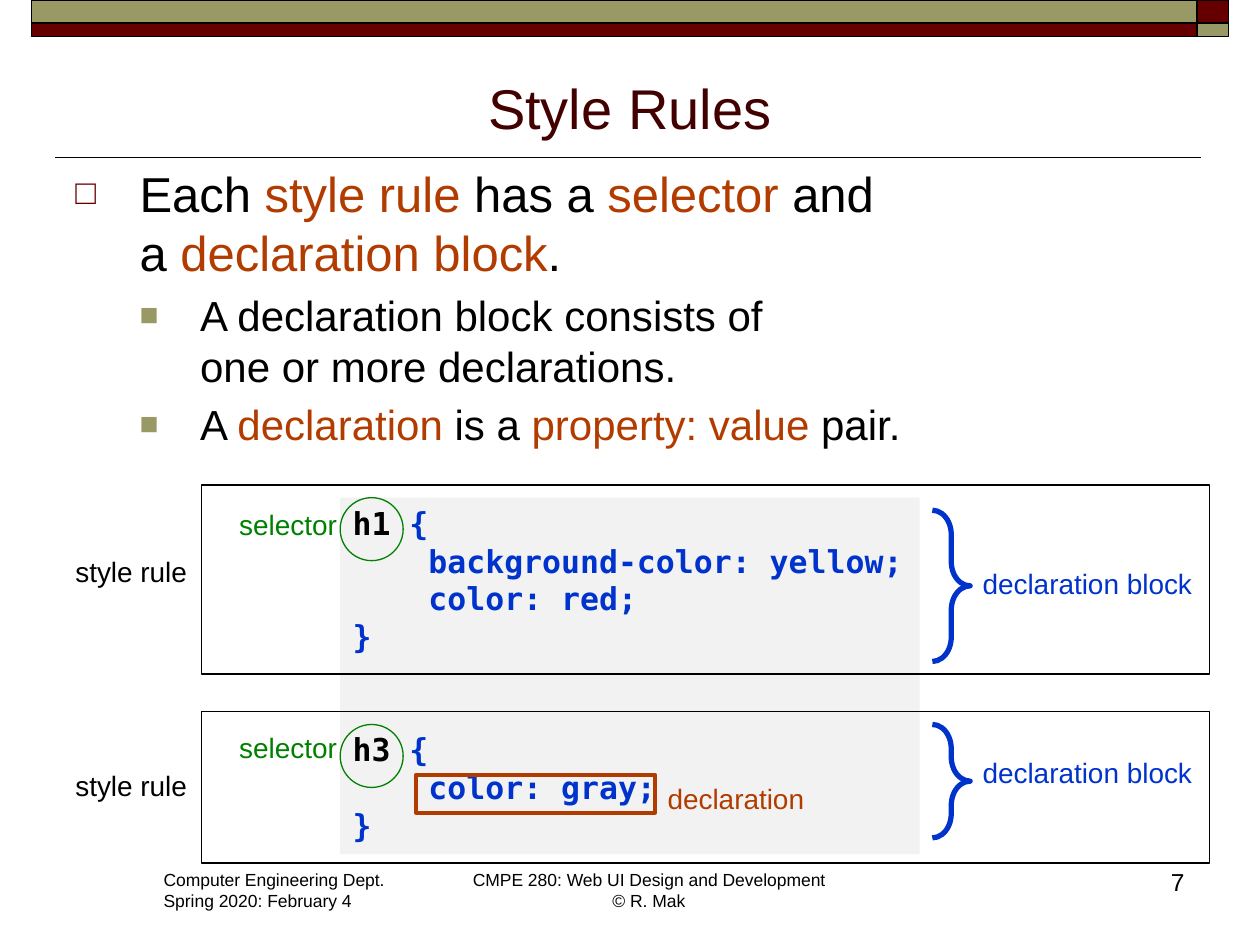
from lxml.etree import SubElement
from pptx import Presentation
from pptx.dml.color import RGBColor
from pptx.enum.shapes import MSO_CONNECTOR, MSO_SHAPE as Shape
from pptx.enum.text import MSO_ANCHOR as Anchor, MSO_AUTO_SIZE as AutoSize, PP_ALIGN as Align
from pptx.oxml.ns import qn
from pptx.util import Inches, Pt

BLACK = RGBColor(0x00, 0x00, 0x00)
MAROON = RGBColor(0x66, 0x00, 0x00)
DARK_MAROON = RGBColor(0x42, 0x00, 0x00)
OLIVE = RGBColor(0x99, 0x99, 0x66)
RUST = RGBColor(0xB2, 0x3C, 0x00)
GREEN = RGBColor(0x00, 0x80, 0x00)
BLUE = RGBColor(0x00, 0x33, 0xCC)
LIGHT_GRAY = RGBColor(0xF2, 0xF2, 0xF2)
SANS = "Arial"
MONO = "DejaVu Sans Mono"

TITLE = "Style Rules"
BULLETS = [
    (0, [("Each ", BLACK), ("style rule ", RUST), ("has a ", BLACK), ("selector", RUST),
         (" and\na ", BLACK), ("declaration block", RUST), (".", BLACK)]),
    (1, [("A declaration block consists of\none or more declarations.", BLACK)]),
    (1, [("A ", BLACK), ("declaration", RUST), (" is a ", BLACK),
         ("property: value ", RUST), ("pair.", BLACK)]),
]
LEVELS = [
    {"size": 28, "left": 0.51, "hang": 0.51, "mark": "□", "color": MAROON, "percent": 70},
    {"size": 24, "left": 0.99, "hang": 0.48, "mark": "■", "color": OLIVE, "percent": 75},
]
CODE = [
    [("h1 ", BLACK), ("{", BLUE)],
    [("    background-color: yellow;", BLUE)],
    [("    color: red;", BLUE)],
    [("}", BLUE)],
    [("h3 ", BLACK), ("{", BLUE)],
    [("    color: gray;", BLUE)],
    [("}", BLUE)],
]
SECOND_RULE_LINE = 4
BLANK_LINES_GAP = 43
RULES = [
    {"top": 3.85, "height": 1.5, "circle": 3.95, "selector": 3.98,
     "brace": 4.05, "brace_height": 1.2, "block": 4.45, "name": 4.35},
    {"top": 5.65, "height": 1.2, "circle": 5.75, "selector": 5.75,
     "brace": 5.75, "brace_height": 0.9, "block": 5.95, "name": 6.05},
]
BANDS = [(0, 0.18, OLIVE, MAROON), (0.18, 0.11, MAROON, OLIVE)]
DEPARTMENT = [[("Computer Engineering Dept.", BLACK)], [("Spring 2020: February 4", BLACK)]]
COURSE = [[("CMPE 280: Web UI Design and Development\n© R. Mak", BLACK)]]
PAGE_NUMBER = [[("7", BLACK)]]


def add_spans(para, spans, size, font=SANS, bold=False):
    for text, color in spans:
        for index, piece in enumerate(text.split("\n")):
            if index:
                para.add_line_break()
            span = para.add_run()
            span.text = piece
            span.font.name = font
            span.font.size = Pt(size)
            span.font.bold = bold
            span.font.color.rgb = color


def fill_frame(frame, lines, size, align=Align.LEFT, font=SANS, bold=False):
    for index, spans in enumerate(lines):
        para = frame.paragraphs[0] if index == 0 else frame.add_paragraph()
        para.alignment = align
        add_spans(para, spans, size, font, bold)


def add_text(page, area, lines, size, align=Align.LEFT, wrap=False):
    box = page.shapes.add_textbox(*map(Inches, area))
    box.text_frame.word_wrap = wrap
    box.text_frame.auto_size = AutoSize.NONE if wrap else AutoSize.SHAPE_TO_FIT_TEXT
    fill_frame(box.text_frame, lines, size, align)
    return box


def add_label(page, area, text, color):
    return add_text(page, area, [[(text, color)]], 16)


def add_figure(page, kind, area, fill=None, line=None, width=0.75):
    figure = page.shapes.add_shape(kind, *map(Inches, area))
    figure.shadow.inherit = False
    if fill is None:
        figure.fill.background()
    else:
        figure.fill.solid()
        figure.fill.fore_color.rgb = fill
    if line is None:
        figure.line.fill.background()
    else:
        figure.line.color.rgb = line
        figure.line.width = Pt(width)
    return figure


def set_bullet(para, level):
    props = para._p.get_or_add_pPr()
    props.set("marL", str(Inches(level["left"])))
    props.set("indent", str(-Inches(level["hang"])))
    color = SubElement(props, qn("a:buClr"))
    SubElement(color, qn("a:srgbClr"), val=str(level["color"]))
    SubElement(props, qn("a:buSzPct"), val=str(level["percent"] * 1000))
    SubElement(props, qn("a:buFont"), typeface=SANS)
    SubElement(props, qn("a:buChar"), char=level["mark"])


def add_header(page):
    rule = page.shapes.add_connector(
        MSO_CONNECTOR.STRAIGHT, Inches(9.53), Inches(1.25), Inches(0.44), Inches(1.25))
    rule.line.color.rgb = BLACK
    rule.line.width = Pt(1)
    SubElement(rule._element.spPr, qn("a:effectLst"))
    for top, height, long_color, corner_color in BANDS:
        add_figure(page, Shape.RECTANGLE, (0.25, top, 9.25, height), long_color, BLACK, 1)
        add_figure(page, Shape.RECTANGLE, (9.5, top, 0.25, height), corner_color, BLACK, 1)
    title = page.shapes.title
    title.left, title.top, title.width, title.height = map(Inches, (0.5, 0.45, 9, 0.72))
    frame = title.text_frame
    frame.vertical_anchor = Anchor.BOTTOM
    frame.auto_size = AutoSize.NONE
    fill_frame(frame, [[(TITLE, DARK_MAROON)]], 32, Align.CENTER)


def add_bullets(page):
    box = add_text(page, (0.5, 1.25, 9, 2.5), [], 28, wrap=True)
    for index, (depth, spans) in enumerate(BULLETS):
        level = LEVELS[depth]
        para = box.text_frame.paragraphs[0] if index == 0 else box.text_frame.add_paragraph()
        para.level = depth
        set_bullet(para, level)
        if index:
            para.space_before = Pt(level["size"] * 0.2)
        add_spans(para, spans, level["size"])


def add_code(page):
    panel = add_figure(page, Shape.RECTANGLE, (2.7, 3.95, 4.6, 2.83), LIGHT_GRAY)
    frame = panel.text_frame
    frame.word_wrap = False
    frame.auto_size = AutoSize.SHAPE_TO_FIT_TEXT
    frame.vertical_anchor = Anchor.TOP
    fill_frame(frame, CODE, 18, font=MONO, bold=True)
    frame.paragraphs[SECOND_RULE_LINE].space_before = Pt(BLANK_LINES_GAP)


def add_rule_notes(page, rule):
    add_figure(page, Shape.OVAL, (2.7, rule["circle"], 0.5, 0.5), line=GREEN)
    add_label(page, (1.8, rule["selector"], 0.99, 0.37), "selector", GREEN)
    brace = add_figure(page, Shape.RIGHT_BRACE,
                       (7.4, rule["brace"], 0.3, rule["brace_height"]), line=BLUE, width=3)
    brace.adjustments[0] = 0.64
    add_label(page, (7.7, rule["block"], 1.9, 0.37), "declaration block", BLUE)
    add_figure(page, Shape.RECTANGLE, (1.6, rule["top"], 8, rule["height"]), line=BLACK)
    add_label(page, (0.5, rule["name"], 1.1, 0.37), "style rule", BLACK)


def main():
    deck = Presentation()
    deck.slide_width, deck.slide_height = Inches(10), Inches(7.5)
    page = deck.slides.add_slide(deck.slide_layouts[5])
    add_header(page)
    add_text(page, (1.2, 6.85, 1.97, 0.44), DEPARTMENT, 10)
    add_text(page, (3.64, 6.85, 3.02, 0.44), COURSE, 10, Align.CENTER)
    add_text(page, (8.9, 6.83, 0.6, 0.5), PAGE_NUMBER, 14, Align.RIGHT, wrap=True)
    add_bullets(page)
    add_code(page)
    for rule in RULES:
        add_rule_notes(page, rule)
    add_figure(page, Shape.RECTANGLE, (3.3, 6.15, 1.9, 0.3), line=RUST, width=2.25)
    add_label(page, (5.2, 6.15, 1.3, 0.37), "declaration", RUST)
    deck.save("out.pptx")


if __name__ == "__main__":
    main()
